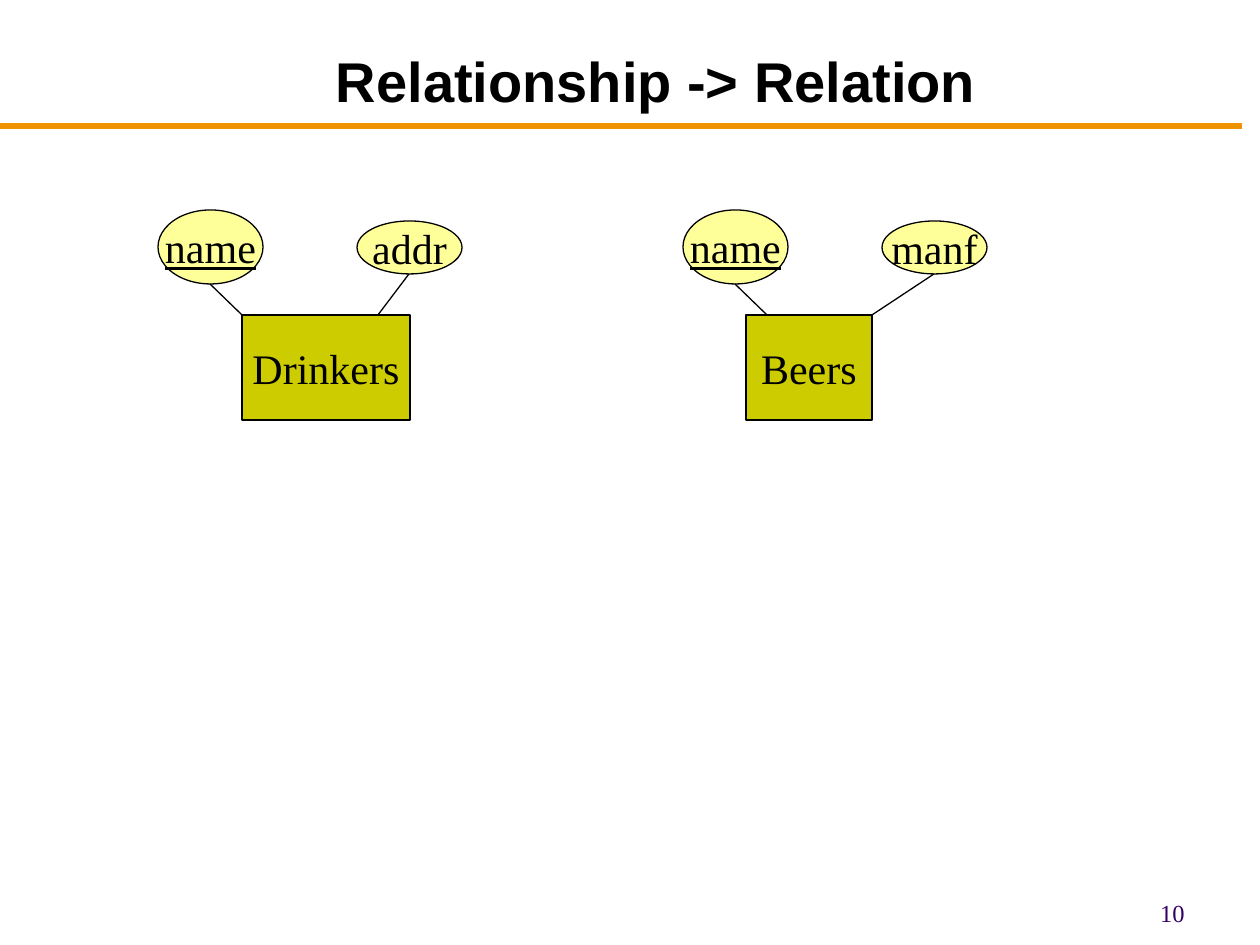
from lxml.etree import SubElement
from pptx import Presentation
from pptx.dml.color import RGBColor
from pptx.enum.shapes import MSO_CONNECTOR, MSO_SHAPE
from pptx.enum.text import MSO_ANCHOR, PP_ALIGN
from pptx.oxml.ns import qn
from pptx.util import Emu, Pt

EMU_PER_PX = 914400 // 126
BLACK = RGBColor(0x00, 0x00, 0x00)
ORANGE = RGBColor(0xEF, 0x91, 0x00)
OLIVE = RGBColor(0xCC, 0xCC, 0x00)
PALE_YELLOW = RGBColor(0xFF, 0xFF, 0x99)
PURPLE = RGBColor(0x33, 0x00, 0x66)

ENTITY_TOP, ENTITY_HEIGHT = 315, 105
ATTRIBUTE_WIDTH, ATTRIBUTE_MIDDLE = 105, 247
KEY_HEIGHT, PLAIN_HEIGHT = 74, 53

# Entity: name, left, width; attributes: name, left, is key, x where its line meets the entity
ENTITIES = [
    ("Drinkers", 242, 168, [("name", 158, True, 242), ("addr", 357, False, 378)]),
    ("Beers", 746, 126, [("name", 683, True, 767), ("manf", 882, False, 872)]),
]


def px(*lengths):
    return [Emu(length * EMU_PER_PX) for length in lengths]


def write(shape, text, size=24, font="Times New Roman", color=BLACK, bold=False,
          underline=False, align=PP_ALIGN.CENTER, anchor=MSO_ANCHOR.MIDDLE, wrap=False):
    frame = shape.text_frame
    frame.word_wrap = wrap
    frame.vertical_anchor = anchor
    paragraph = frame.paragraphs[0]
    paragraph.alignment = align
    run = paragraph.add_run()
    run.text = text
    run.font.size = Pt(size)
    run.font.name = font
    run.font.color.rgb = color
    run.font.bold = bold
    run.font.underline = underline


def add_label(slide, box, text, **text_format):
    write(slide.shapes.add_textbox(*px(*box)), text, wrap=True, **text_format)


def add_node(slide, kind, box, fill, text, **text_format):
    node = slide.shapes.add_shape(kind, *px(*box))
    node.shadow.inherit = False
    node.fill.solid()
    node.fill.fore_color.rgb = fill
    node.line.color.rgb = BLACK
    node.line.width = Pt(0.75)
    write(node, text, **text_format)


def add_line(slide, start, end, color=BLACK, width=0.75):
    line = slide.shapes.add_connector(MSO_CONNECTOR.STRAIGHT, *px(*start, *end))
    line.line.color.rgb = color
    line.line.width = Pt(width)
    SubElement(line._element.spPr, qn("a:effectLst"))


def add_attribute(slide, name, left, is_key, joint_x):
    """Draw an attribute ellipse and its line down to the entity."""
    height = KEY_HEIGHT if is_key else PLAIN_HEIGHT
    top = ATTRIBUTE_MIDDLE - height // 2
    add_node(slide, MSO_SHAPE.OVAL, (left, top, ATTRIBUTE_WIDTH, height),
             PALE_YELLOW, name, underline=is_key)
    add_line(slide, (left + ATTRIBUTE_WIDTH // 2, top + height), (joint_x, ENTITY_TOP))


def add_entity(slide, name, left, width, attributes):
    add_node(slide, MSO_SHAPE.RECTANGLE, (left, ENTITY_TOP, width, ENTITY_HEIGHT), OLIVE, name)
    for attribute in attributes:
        add_attribute(slide, *attribute)


def main():
    presentation = Presentation()
    presentation.slide_width, presentation.slide_height = px(1260, 945)
    slide = presentation.slides.add_slide(presentation.slide_layouts[6])

    add_line(slide, (0, 126), (1242, 126), color=ORANGE, width=3)
    add_label(slide, (136, 31, 1040, 89), "Relationship -> Relation", size=32,
              font="Arial", bold=True, anchor=MSO_ANCHOR.BOTTOM)
    add_label(slide, (903, 892, 294, 32), "10", size=14, color=PURPLE,
              align=PP_ALIGN.RIGHT, anchor=MSO_ANCHOR.TOP)
    for entity in ENTITIES:
        add_entity(slide, *entity)

    presentation.save("out.pptx")


if __name__ == "__main__":
    main()
